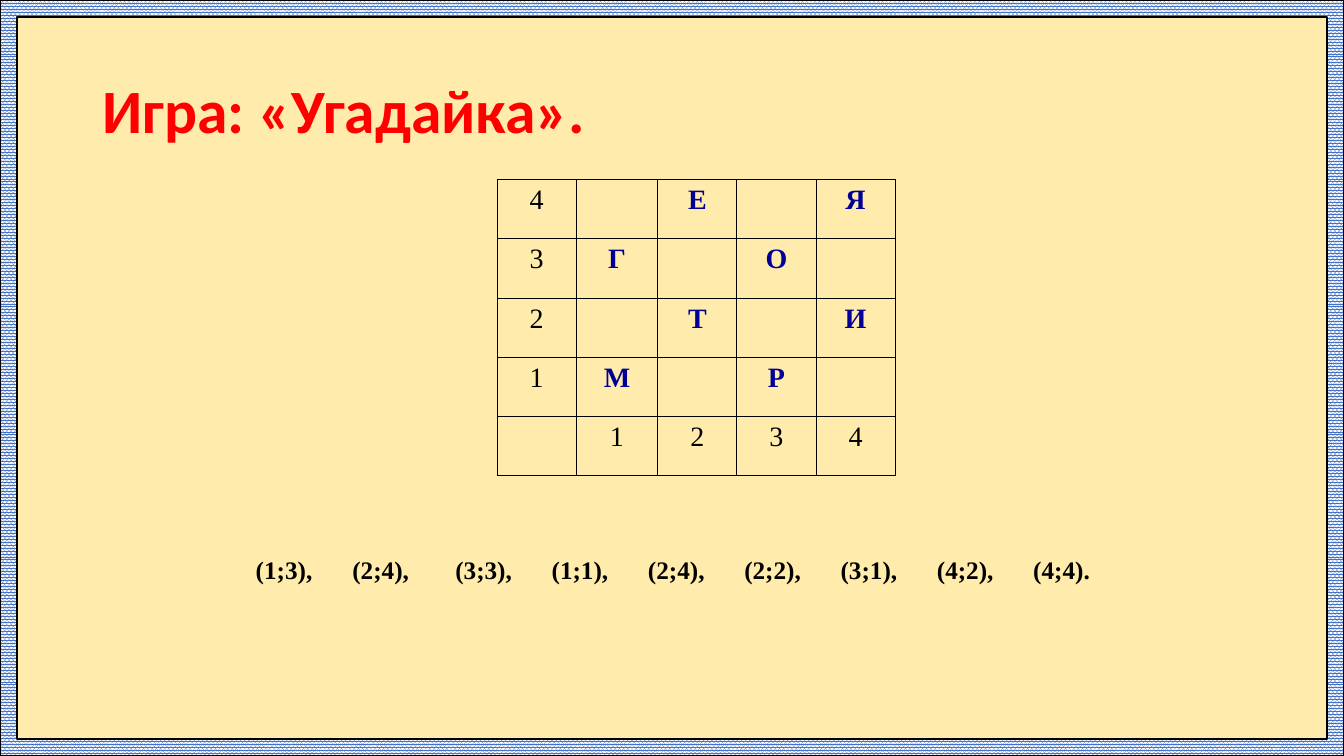
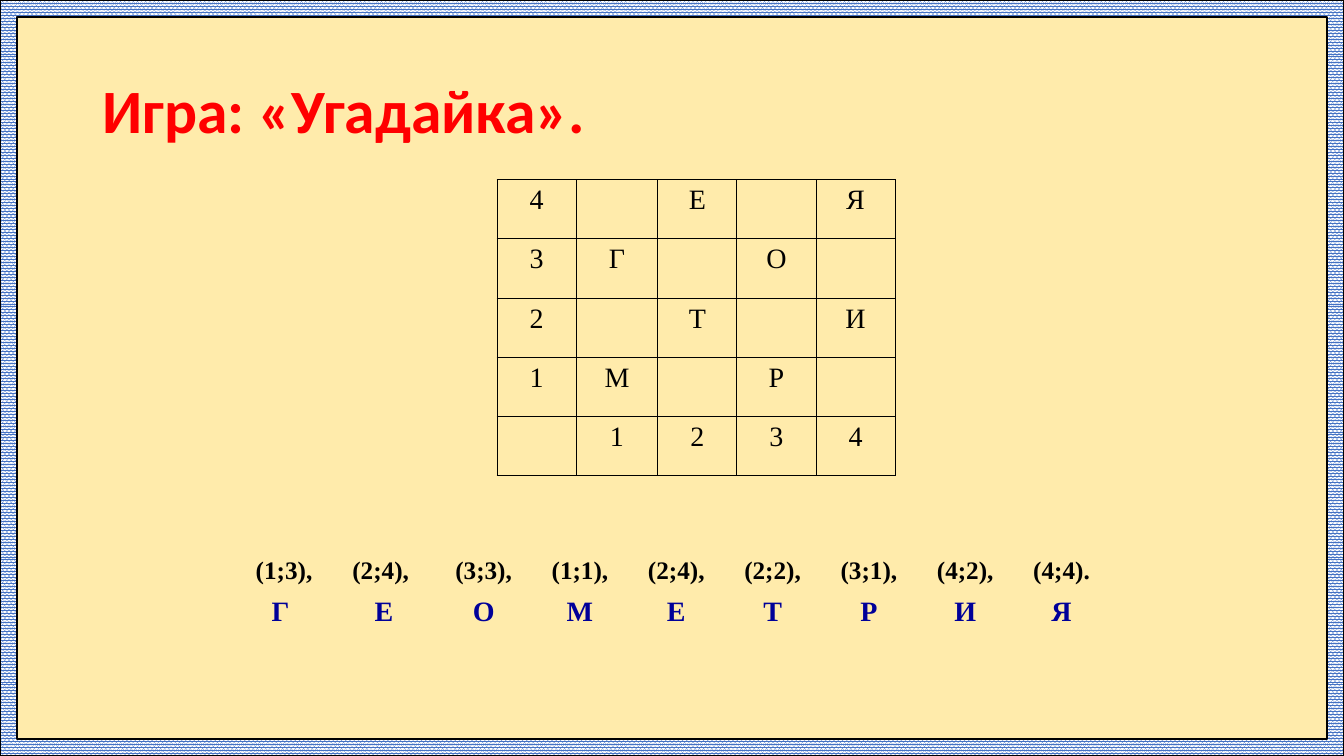
"""Build two slides of a coordinate guessing game."""
from dataclasses import dataclass

from lxml import etree
from pptx import Presentation
from pptx import util as u
from pptx.dml.color import RGBColor
from pptx.enum import dml, shapes, text
from pptx.oxml import ns


@dataclass(frozen=True)
class Theme:
    paper: RGBColor = RGBColor.from_string("FFEBAB")
    paper_edge: RGBColor = RGBColor.from_string("325491")
    weave: RGBColor = RGBColor.from_string("4472C4")
    white: RGBColor = RGBColor.from_string("FFFFFF")
    ink: RGBColor = RGBColor.from_string("000000")
    answer: RGBColor = RGBColor.from_string("000099")
    heading: RGBColor = RGBColor.from_string("FF0000")
    heading_font: str = "Calibri"
    body_font: str = "Times New Roman"
    heading_size: int = 44
    letter_size: int = 20
    pair_size: int = 18


@dataclass(frozen=True)
class TextStyle:
    font: str
    size: int
    color: RGBColor
    bold: bool = False


@dataclass(frozen=True)
class Grid:
    left: float
    top: float
    widths: tuple[float, ...]
    heights: tuple[float, ...]
    ruled: bool


THEME = Theme()
WIDTH, HEIGHT = 960, 540
HEADING = TextStyle(THEME.heading_font, THEME.heading_size, THEME.heading, True)
PLAIN = TextStyle(THEME.body_font, THEME.letter_size, THEME.ink)
ANSWER = TextStyle(THEME.body_font, THEME.letter_size, THEME.answer, True)
PAIR = TextStyle(THEME.body_font, THEME.pair_size, THEME.ink, True)

BOARD = Grid(355, 128.2, (56.5, 58.4, 56.5, 56.5, 56.5), (42.35,) * 5, True)
BOARD_ROWS = (
    ("4", "", "Е", "", "Я"),
    ("3", "Г", "", "О", ""),
    ("2", "", "Т", "", "И"),
    ("1", "М", "", "Р", ""),
    ("", "1", "2", "3", "4"),
)
CLUE_WIDTHS = (68.8, 73.8) + (68.8,) * 7
CLUES = ("(1;3),", "(2;4), ", "(3;3),", "(1;1),", "(2;4),",
         "(2;2),", "(3;1),", "(4;2),", "(4;4).")
SOLUTION = ("Г ", "Е", "О", "М", "Е", "Т", "Р", "И", "Я")


def apply_style(paragraph, style: TextStyle) -> None:
    """Format a whole paragraph."""
    font = paragraph.font
    font.name, font.size, font.bold = style.font, u.Pt(style.size), style.bold
    font.color.rgb = style.color


def set_borders(cell, ruled: bool) -> None:
    """Rule all four sides of a cell, or clear them."""
    properties = cell._tc.get_or_add_tcPr()
    for side in ("a:lnL", "a:lnR", "a:lnT", "a:lnB"):
        edge = etree.SubElement(properties, ns.qn(side), w=str(u.Pt(0.75)))
        if ruled:
            paint = etree.SubElement(edge, ns.qn("a:solidFill"))
            etree.SubElement(paint, ns.qn("a:srgbClr"), val=str(THEME.ink))
        else:
            etree.SubElement(edge, ns.qn("a:noFill"))


def add_grid(slide, grid: Grid, rows, style_for) -> None:
    """Draw a centred table, styling each entry by its wording."""
    table = slide.shapes.add_table(
        len(grid.heights), len(grid.widths), u.Pt(grid.left), u.Pt(grid.top),
        u.Pt(sum(grid.widths)), u.Pt(sum(grid.heights))).table
    table.first_row = table.horz_banding = False
    for column, width in zip(table.columns, grid.widths):
        column.width = u.Pt(width)
    for line, height, entries in zip(table.rows, grid.heights, rows):
        line.height = u.Pt(height)
        for cell, entry in zip(line.cells, entries):
            set_borders(cell, grid.ruled)
            cell.fill.background()
            cell.text = entry
            paragraph = cell.text_frame.paragraphs[0]
            paragraph.alignment = text.PP_ALIGN.CENTER
            apply_style(paragraph, style_for(entry))


def add_backdrop(slide) -> None:
    """Put the paper and its woven frame on the slide's layout."""
    page = (0, 0, u.Pt(WIDTH), u.Pt(HEIGHT))
    paper = slide.shapes.add_shape(shapes.MSO_SHAPE.RECTANGLE, *page)
    paper.fill.solid()
    paper.fill.fore_color.rgb = THEME.paper
    frame = slide.shapes.add_shape(shapes.MSO_SHAPE.FRAME, *page)
    frame.adjustments[0] = 0.022
    frame.fill.patterned()
    frame.fill.pattern = dml.MSO_PATTERN.PERCENT_80
    frame.fill.fore_color.rgb = THEME.weave
    frame.fill.back_color.rgb = THEME.white
    layers = ((paper, THEME.paper_edge, 1), (frame, THEME.ink, 1.5))
    for depth, (layer, edge, weight) in enumerate(layers, start=2):
        layer.shadow.inherit = False
        layer.line.color.rgb = edge
        layer.line.width = u.Pt(weight)
        slide.slide_layout.shapes.element.insert(depth, layer.element)


def add_title(slide) -> None:
    """Place and format the heading."""
    title = slide.shapes.title
    title.left, title.top = u.Pt(66), u.Pt(28.75)
    title.width, title.height = u.Pt(828), u.Pt(104.4)
    title.text = "Игра: «Угадайка»."
    title.text_frame.auto_size = text.MSO_AUTO_SIZE.NONE
    title.text_frame.vertical_anchor = text.MSO_ANCHOR.MIDDLE
    heading = title.text_frame.paragraphs[0]
    heading.alignment = text.PP_ALIGN.LEFT
    heading.line_spacing = 0.9
    apply_style(heading, HEADING)


def add_game(deck, letter_style: TextStyle, solved: bool):
    """Add a slide with the board, the clues and, when solved, the word."""
    slide = deck.slides.add_slide(deck.slide_layouts[5])
    add_title(slide)
    add_grid(slide, BOARD, BOARD_ROWS,
             lambda entry: letter_style if entry.isalpha() else PLAIN)
    rows = (CLUES, SOLUTION) if solved else (CLUES,)
    clues = Grid(168.5, 394.6, CLUE_WIDTHS, (28, 31)[:len(rows)], False)
    add_grid(slide, clues, rows,
             lambda entry: PAIR if entry.startswith("(") else ANSWER)
    return slide


def main() -> None:
    """Build and save the deck."""
    deck = Presentation()
    deck.slide_width, deck.slide_height = u.Pt(WIDTH), u.Pt(HEIGHT)
    opening = add_game(deck, ANSWER, solved=False)
    add_backdrop(opening)
    add_game(deck, PLAIN, solved=True)
    deck.save("out.pptx")


if __name__ == "__main__":
    main()
